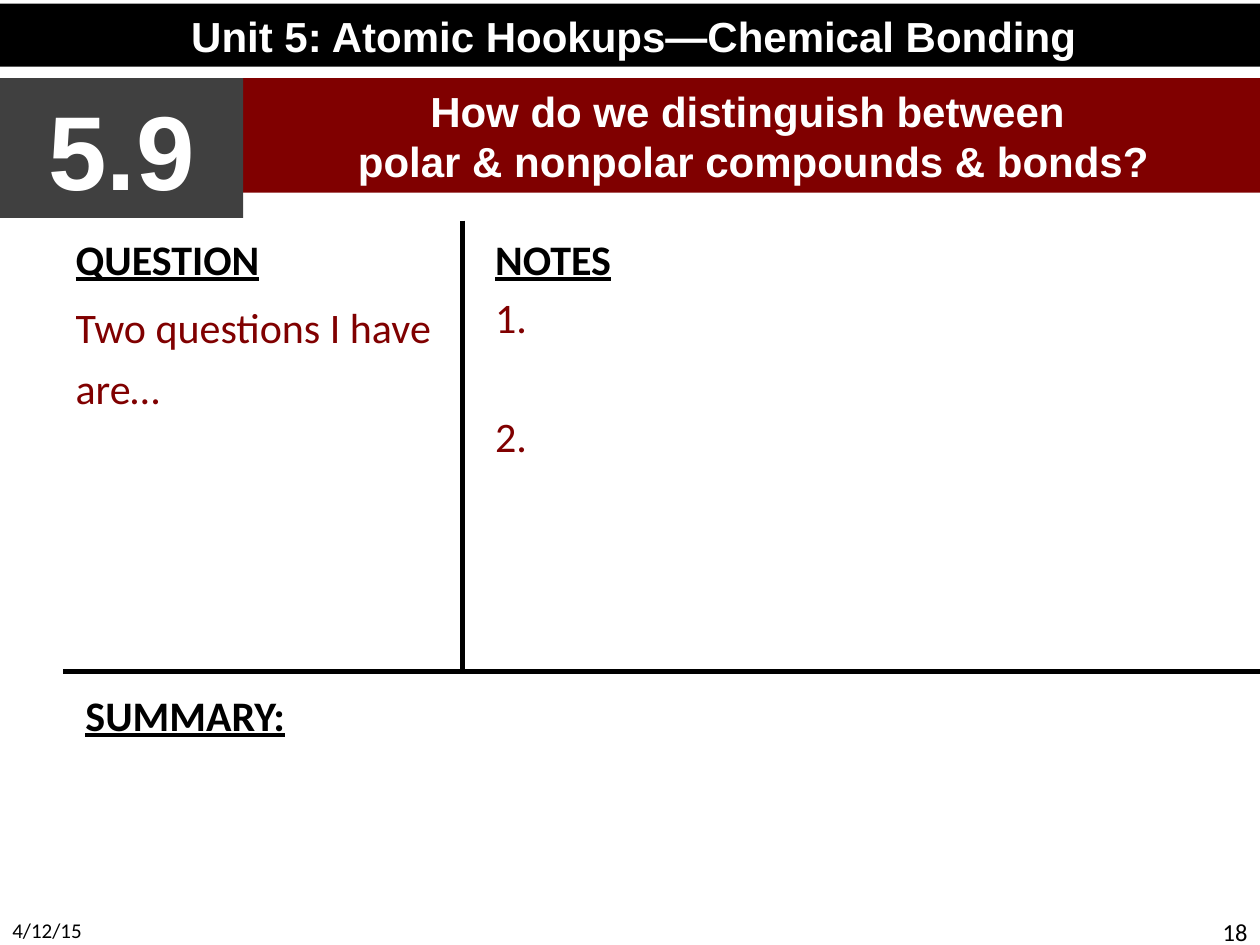
from lxml import etree
from pptx import Presentation
from pptx import util as u
from pptx.dml.color import RGBColor
from pptx.enum import shapes, text
from pptx.oxml.ns import qn

WIDTH, HEIGHT = 10, 7.5
BLACK, WHITE, MAROON, GRAY = "000000", "FFFFFF", "800000", "404040"
LEFT, DIVIDER, TOP, RULE = 0.5, 3.67, 1.8, 5.33
BANNER_TOP, NUMBER_WIDTH = 0.62, 1.93
FOOTER_TOP, FOOTER_WIDTH = 7.23, 2.33
GAP = 4.8
LINE = 29.3

HEADING = dict(size=24, color=BLACK, bold=True, underline=True)
ENTRY = dict(size=24, color=MAROON)
BANNER = dict(font="Arial", size=24, color=WHITE, bold=True, align="CENTER")

UNIT = [("Unit 5: Atomic Hookups—Chemical Bonding", BANNER)]
NUMBER = [("5.9", {**BANNER, "size": 60})]
TOPIC = [("How do we distinguish between ", BANNER),
         ("polar & nonpolar compounds & bonds?", BANNER)]
QUESTION = [("QUESTION", HEADING),
            ("Two questions I have are…", {**ENTRY, "before": GAP, "spacing": 1.2})]
NOTES = [("NOTES", HEADING),
         ("1.", {**ENTRY, "before": GAP}),
         ("2.", {**ENTRY, "before": 2 * GAP + LINE})]
SUMMARY = [("SUMMARY:", HEADING)]
DATE = [("4/12/15", dict(size=12, color=BLACK))]
PAGE = [("18", dict(size=14, color=BLACK, align="RIGHT"))]


def rgb(color):
    return RGBColor.from_string(color)


def place(shape, left, top, width, height):
    shape.left, shape.top = u.Inches(left), u.Inches(top)
    shape.width, shape.height = u.Inches(width), u.Inches(height)


def write(shape, lines, anchor="TOP"):
    frame = shape.text_frame
    frame.word_wrap = True
    frame.auto_size = text.MSO_AUTO_SIZE.NONE
    frame.vertical_anchor = getattr(text.MSO_ANCHOR, anchor)
    for i, (words, style) in enumerate(lines):
        paragraph = frame.add_paragraph() if i else frame.paragraphs[0]
        properties = paragraph._p.get_or_add_pPr()
        properties.set("marL", "0")
        properties.set("indent", "0")
        etree.SubElement(properties, qn("a:buNone"))
        paragraph.alignment = getattr(text.PP_ALIGN, style.get("align", "LEFT"))
        paragraph.space_before = u.Pt(style.get("before", 0))
        paragraph.line_spacing = style.get("spacing", 1.0)
        run = paragraph.add_run()
        run.text = words
        run.font.name = style.get("font", "Calibri")
        run.font.size = u.Pt(style["size"])
        run.font.bold = style.get("bold", False)
        run.font.underline = style.get("underline", False)
        run.font.color.rgb = rgb(style["color"])


def paint(shape, color):
    shape.fill.solid()
    shape.fill.fore_color.rgb = rgb(color)


def add_banner(slide, box, color, lines):
    banner = slide.shapes.add_shape(shapes.MSO_SHAPE.RECTANGLE, *map(u.Inches, box))
    banner.shadow.inherit = False
    banner.line.fill.background()
    paint(banner, color)
    write(banner, lines, "MIDDLE")


def add_text(slide, box, lines):
    write(slide.shapes.add_textbox(*map(u.Inches, box)), lines)


def add_rule(slide, *ends):
    rule = slide.shapes.add_connector(shapes.MSO_CONNECTOR.STRAIGHT, *map(u.Inches, ends))
    rule.line.color.rgb = rgb(BLACK)
    rule.line.width = u.Pt(3)
    etree.SubElement(rule._element.spPr, qn("a:effectLst"))


def main():
    deck = Presentation()
    deck.slide_width, deck.slide_height = u.Inches(WIDTH), u.Inches(HEIGHT)
    slide = deck.slides.add_slide(deck.slide_layouts[3])
    topic, question, notes = slide.placeholders

    add_banner(slide, (0, 0.03, 10.06, 0.5), BLACK, UNIT)
    add_banner(slide, (0, BANNER_TOP, NUMBER_WIDTH, 1.11), GRAY, NUMBER)
    place(topic, NUMBER_WIDTH, BANNER_TOP, 8.1, 0.91)
    paint(topic, MAROON)
    write(topic, TOPIC, "MIDDLE")

    place(question, LEFT, TOP, DIVIDER - LEFT, 3.45)
    write(question, QUESTION)
    place(notes, 3.83, TOP, WIDTH - 3.83, 3.45)
    write(notes, NOTES)
    add_text(slide, (0.58, 5.42, WIDTH - 0.58, 2.08), SUMMARY)

    add_rule(slide, DIVIDER, 1.75, DIVIDER, RULE)
    add_rule(slide, WIDTH, RULE, LEFT, RULE)

    for left, lines in ((0, DATE), (WIDTH - FOOTER_WIDTH, PAGE)):
        add_text(slide, (left, FOOTER_TOP, FOOTER_WIDTH, HEIGHT - FOOTER_TOP), lines)
    deck.save("out.pptx")


if __name__ == "__main__":
    main()
